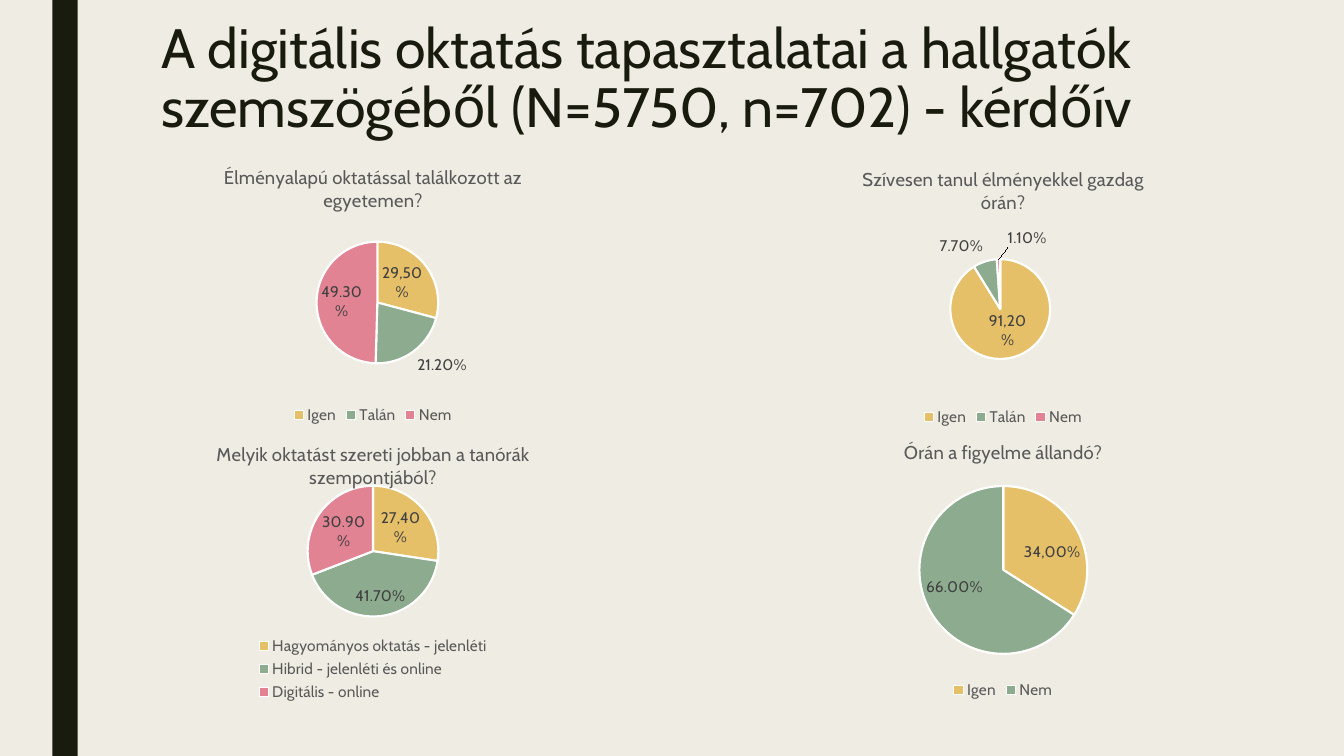
from lxml import etree
from pptx import Presentation
from pptx.chart.data import CategoryChartData
from pptx.dml.color import RGBColor
from pptx.enum.chart import XL_CHART_TYPE as ChartType
from pptx.enum.chart import XL_LABEL_POSITION as LabelPos
from pptx.enum.chart import XL_LEGEND_POSITION as LegendPos
from pptx.enum.shapes import MSO_SHAPE as Shape
from pptx.enum.text import MSO_ANCHOR as Anchor
from pptx.oxml.ns import qn
from pptx.util import Inches, Pt

TITLE = "A digitális oktatás tapasztalatai a hallgatók szemszögéből (N=5750, n=702) - kérdőív"
YES_MAYBE_NO = ("Igen", "Talán", "Nem")
CHARTS = [
    dict(title="Élményalapú oktatással találkozott az egyetemen?", cell=(0, 0), nudge=0,
         cats=YES_MAYBE_NO, vals=(0.29, 0.212, 0.493), first="29,50%"),
    dict(title="Szívesen tanul élményekkel gazdag órán?", cell=(1, 0), nudge=0.02,
         cats=YES_MAYBE_NO, vals=(0.912, 0.077, 0.011), first="91,20%",
         moved={2: {"x": 0.07, "y": -0.02}}),
    dict(title="Órán a figyelme állandó?", cell=(1, 1), nudge=-0.02,
         cats=("Igen", "Nem"), vals=(0.34, 0.66), first="34,00%"),
    dict(title="Melyik oktatást szereti jobban a tanórák szempontjából?", cell=(0, 1), nudge=0,
         cats=("Hagyományos oktatás - jelenléti", "Hibrid - jelenléti és online",
               "Digitális - online"),
         vals=(0.274, 0.417, 0.309), first="27,40%",
         plot={"x": 0.34, "y": 0.21, "w": 0.32, "h": 0.47}),
]

FONT = "Cabin"
PERCENT = "0.00%"
PAPER = RGBColor(0xEF, 0xED, 0xE3)
INK = RGBColor(0x19, 0x1B, 0x0E)
GREY = RGBColor(0x59, 0x59, 0x59)
LABEL_GREY = RGBColor(0x40, 0x40, 0x40)
WHITE = RGBColor(0xFF, 0xFF, 0xFF)
SLICES = [RGBColor(0xE6, 0xC0, 0x69), RGBColor(0x8D, 0xAB, 0x8E), RGBColor(0xE2, 0x83, 0x94)]

LEFT, TOP = 1.65, 1.49
COL_STEP, ROW_STEP = 6.25, 2.75
CHART_W, CHART_H = 4.1, 2.76


def set_font(font, size, color):
    for name, value in {"name": FONT, "size": Pt(size), "bold": False}.items():
        setattr(font, name, value)
    font.color.rgb = color


def make_layout(values, **extra):
    layout = etree.Element(qn("c:layout"))
    manual = etree.SubElement(layout, qn("c:manualLayout"))
    for tag, value in {**extra, **values}.items():
        etree.SubElement(manual, qn(f"c:{tag}")).set("val", str(value))
    return layout


def add_pie(s, title, cell, nudge, cats, vals, first, moved=None, plot=None):
    data = CategoryChartData(number_format=PERCENT)
    data.categories = cats
    data.add_series(title, vals)
    x = LEFT + cell[0] * COL_STEP
    y = TOP + cell[1] * ROW_STEP + nudge
    chart = s.shapes.add_chart(ChartType.PIE, Inches(x), Inches(y),
                               Inches(CHART_W), Inches(CHART_H), data).chart
    set_font(chart.font, 11, GREY)

    chart.has_title = True
    tf = chart.chart_title.text_frame
    tf.text = title
    set_font(tf.paragraphs[0].runs[0].font, 13.2, GREY)

    chart.has_legend = True
    chart.legend.position = LegendPos.BOTTOM
    chart.legend.include_in_layout = False
    set_font(chart.legend.font, 11, GREY)

    pie = chart.plots[0]
    pie.vary_by_categories = True
    series = pie.series[0]
    labels = series.data_labels
    for name, value in {"show_value": True, "number_format": PERCENT,
                        "number_format_is_linked": False,
                        "position": LabelPos.BEST_FIT}.items():
        setattr(labels, name, value)
    set_font(labels.font, 11, LABEL_GREY)

    for i, color in enumerate(SLICES[:len(vals)]):
        fmt = series.points[i].format
        fmt.fill.solid()
        fmt.fill.fore_color.rgb = color
        fmt.line.color.rgb = WHITE
        fmt.line.width = Pt(1.5)

    label = series.points[0].data_label
    label.text_frame.text = first
    set_font(label.text_frame.paragraphs[0].runs[0].font, 11, LABEL_GREY)
    label.position = LabelPos.BEST_FIT

    space = chart.element if hasattr(chart, "element") else chart._chartSpace
    for i, offset in (moved or {}).items():
        label = series.points[i].data_label
        set_font(label.font, 11, LABEL_GREY)
        label.position = LabelPos.BEST_FIT
        idx = space.xpath(f".//c:dLbl/c:idx[@val='{i}']")[0]
        layout = make_layout(offset)
        idx.addnext(layout)
        number = etree.Element(qn("c:numFmt"), formatCode=PERCENT, sourceLinked="0")
        layout.addnext(number)

    if plot:
        area = space.xpath(".//c:plotArea")[0]
        for old in area.findall(qn("c:layout")):
            area.remove(old)
        area.insert(0, make_layout(plot, layoutTarget="inner", xMode="edge", yMode="edge"))


def main():
    prs = Presentation()
    prs.slide_width, prs.slide_height = Inches(13.33), Inches(7.5)
    s = prs.slides.add_slide(prs.slide_layouts[6])
    s.background.fill.solid()
    s.background.fill.fore_color.rgb = PAPER

    bar = s.shapes.add_shape(Shape.RECTANGLE, Inches(0.52), 0, Inches(0.25), prs.slide_height)
    bar.shadow.inherit = False
    bar.fill.solid()
    bar.fill.fore_color.rgb = INK
    bar.line.fill.background()

    tf = s.shapes.add_textbox(Inches(1.5), Inches(0.15), Inches(10.5), Inches(1.29)).text_frame
    tf.word_wrap = True
    tf.vertical_anchor = Anchor.MIDDLE
    p = tf.paragraphs[0]
    p.line_spacing = 0.89
    r = p.add_run()
    r.text = TITLE
    set_font(r.font, 39.6, INK)

    for chart in CHARTS:
        add_pie(s, **chart)
    prs.save("out.pptx")


if __name__ == "__main__":
    main()
